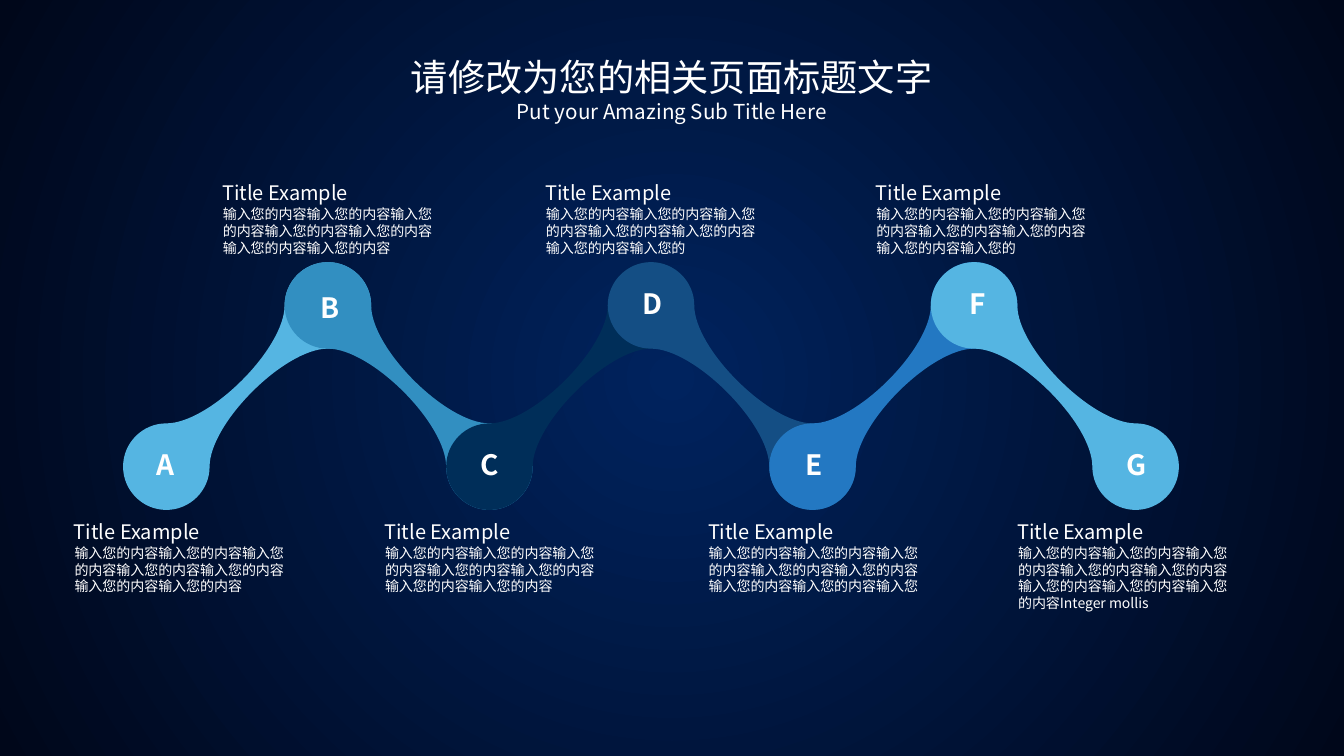
from math import cos, radians, sin

from lxml.etree import SubElement
from pptx import Presentation
from pptx.dml.color import RGBColor
from pptx.enum.text import MSO_ANCHOR, MSO_AUTO_SIZE, PP_ALIGN
from pptx.oxml.ns import qn
from pptx.util import Inches, Pt

WIDTH, HEIGHT = Inches(13.33), Inches(7.5)
FONT = "Noto Sans CJK SC"

WHITE = RGBColor(0xFF, 0xFF, 0xFF)
GLOW = RGBColor(0x00, 0x23, 0x5E)
NIGHT = RGBColor(0x00, 0x07, 0x1A)
SKY = RGBColor(0x55, 0xB5, 0xE2)
OCEAN = RGBColor(0x32, 0x8F, 0xC1)
NAVY = RGBColor(0x00, 0x2E, 0x59)
STEEL = RGBColor(0x14, 0x4E, 0x84)
AZURE = RGBColor(0x23, 0x78, 0xC2)

# Node grid, in percent of the slide's width or height
FIRST_COLUMN, COLUMN_STEP = 12.38, 12.02
UPPER_ROW, LOWER_ROW = 40.4, 61.73
UPPER_CAPTION, LOWER_CAPTION = 23.87, 68.67
RADIUS = across_radius = int(WIDTH * 0.0322)
ROUNDNESS = 0.55  # control length of a quarter circle

PHRASE = "输入您的内容"
# Letter, letter left and top, letter width, caption left, caption text
NODES = [
    ("A", 11.18, 58.4, 2.4, 5.5, PHRASE * 7),
    ("B", 23.4, 37.6, 2.25, 16.53, PHRASE * 7),
    ("C", 35.33, 58.4, 2.25, 28.6, PHRASE * 7),
    ("D", 47.33, 37.07, 2.55, 40.57, PHRASE * 6 + "输入您的"),
    ("E", 59.48, 58.4, 2.03, 52.68, PHRASE * 7 + "输入您"),
    ("F", 71.7, 37.07, 2.03, 65.15, PHRASE * 6 + "输入您的"),
    ("G", 83.35, 58.4, 2.48, 75.7, PHRASE * 8 + "Integer mollis"),
]
LINK_COLOURS = [SKY, OCEAN, NAVY, STEEL, AZURE, SKY]


def across(percent):
    return int(WIDTH * percent / 100)


def down(percent):
    return int(HEIGHT * percent / 100)


def node_centre(index):
    row = UPPER_ROW if index % 2 else LOWER_ROW
    return across(FIRST_COLUMN + index * COLUMN_STEP), down(row)


def paint_background(slide):
    fill = slide.background.fill
    fill.gradient()
    for stop, colour in zip(fill.gradient_stops, (GLOW, NIGHT)):
        stop.color.rgb = colour
    gradient = slide.background._cSld.find(".//" + qn("a:gradFill"))
    gradient.remove(gradient.find(qn("a:lin")))
    circle = SubElement(gradient, qn("a:path"), {"path": "circle"})
    SubElement(circle, qn("a:fillToRect"), dict.fromkeys("ltrb", "50000"))


def add_text(shapes, text, left, top, width, height, size,
             align=PP_ALIGN.LEFT, bold=False, **frame_format):
    shape = shapes.add_textbox(across(left), down(top), across(width), down(height))
    frame = shape.text_frame
    frame_values = {
        "word_wrap": True, "auto_size": MSO_AUTO_SIZE.SHAPE_TO_FIT_TEXT,
        "margin_left": 0, "margin_top": 0, "margin_right": 0, "margin_bottom": 0,
    }
    for name, value in (frame_values | frame_format).items():
        setattr(frame, name, value)
    paragraph = frame.paragraphs[0]
    paragraph.alignment = align
    run = paragraph.add_run()
    run.text = text
    for name, value in {"name": FONT, "size": Pt(size), "bold": bold}.items():
        setattr(run.font, name, value)
    run.font.color.rgb = WHITE
    SubElement(run._r.get_or_add_rPr(), qn("a:ea"), {"typeface": FONT})


def three_quarters(centre, first_angle, rise):
    """Curve points, three to a quarter circle, turning from first_angle."""
    points = []
    for quarter in range(3):
        angle = radians(first_angle - 90 * quarter)
        x, y = cos(angle), sin(angle)
        points += [(x + ROUNDNESS * y, y - ROUNDNESS * x),
                   (y + ROUNDNESS * x, ROUNDNESS * y - x), (y, -x)]
    return [(centre[0] + RADIUS * x, centre[1] + rise * RADIUS * y) for x, y in points]


def bend_segments(shape):
    """Turn every three straight segments into one Bézier curve."""
    segments = list(shape._element.iter(qn("a:lnTo")))
    for first, second, third in zip(segments[::3], segments[1::3], segments[2::3]):
        first.tag = qn("a:cubicBezTo")
        for segment in (second, third):
            first.append(segment[0])
            segment.getparent().remove(segment)


def add_link(shapes, start, end, colour):
    """Two discs joined by a neck that narrows in the middle."""
    rise = 1 if end[1] < start[1] else -1
    (x1, y1), (x2, y2) = start, end
    offset = rise * RADIUS
    outline = [
        (x2 - RADIUS, y2),
        (x2 - RADIUS, y2 + offset), (x1 + RADIUS, y1 - offset), (x1, y1 - offset),
        *three_quarters(start, 270, rise),
        (x1 + RADIUS, y1 - offset), (x2 - RADIUS, y2 + offset), (x2, y2 + offset),
        *three_quarters(end, 90, rise),
    ]
    first, *others = [(round(x), round(y)) for x, y in outline]
    builder = shapes.build_freeform(*first)
    builder.add_line_segments(others, close=True)
    shape = builder.convert_to_shape()
    bend_segments(shape)
    shape.shadow.inherit = False
    shape.fill.solid()
    shape.fill.fore_color.rgb = colour
    shape.line.fill.background()


def add_letter(shapes, letter, left, top, width):
    margins = {"margin_" + side: Inches(0.06) for side in ("left", "top", "right", "bottom")}
    add_text(shapes, letter, left, top, width, 6, 20, bold=True, word_wrap=False,
             vertical_anchor=MSO_ANCHOR.MIDDLE, **margins)


def add_caption(shapes, text, left, top):
    add_text(shapes, "Title Example", left, top, 15.75, 3.2, 14.3)
    add_text(shapes, text, left + 0.05, top + 3.33, 15.7, 6.67, 10)


def main():
    presentation = Presentation()
    presentation.slide_width, presentation.slide_height = WIDTH, HEIGHT
    slide = presentation.slides.add_slide(presentation.slide_layouts[6])
    shapes = slide.shapes
    paint_background(slide)

    # Headings
    add_text(shapes, "请修改为您的相关页面标题文字", 20.5, 7.2, 59, 6, 26.6, PP_ALIGN.CENTER)
    add_text(shapes, "Put your Amazing Sub Title Here", 29, 13.07, 42, 3.33, 14.7,
             PP_ALIGN.CENTER)

    # Chain of discs, each link lying over the one before
    for index, colour in enumerate(LINK_COLOURS):
        add_link(shapes, node_centre(index), node_centre(index + 1), colour)

    # Letters and captions
    for index, (letter, left, top, width, caption_left, text) in enumerate(NODES):
        add_letter(shapes, letter, left, top, width)
        add_caption(shapes, text, caption_left, UPPER_CAPTION if index % 2 else LOWER_CAPTION)

    presentation.save("out.pptx")


if __name__ == "__main__":
    main()
